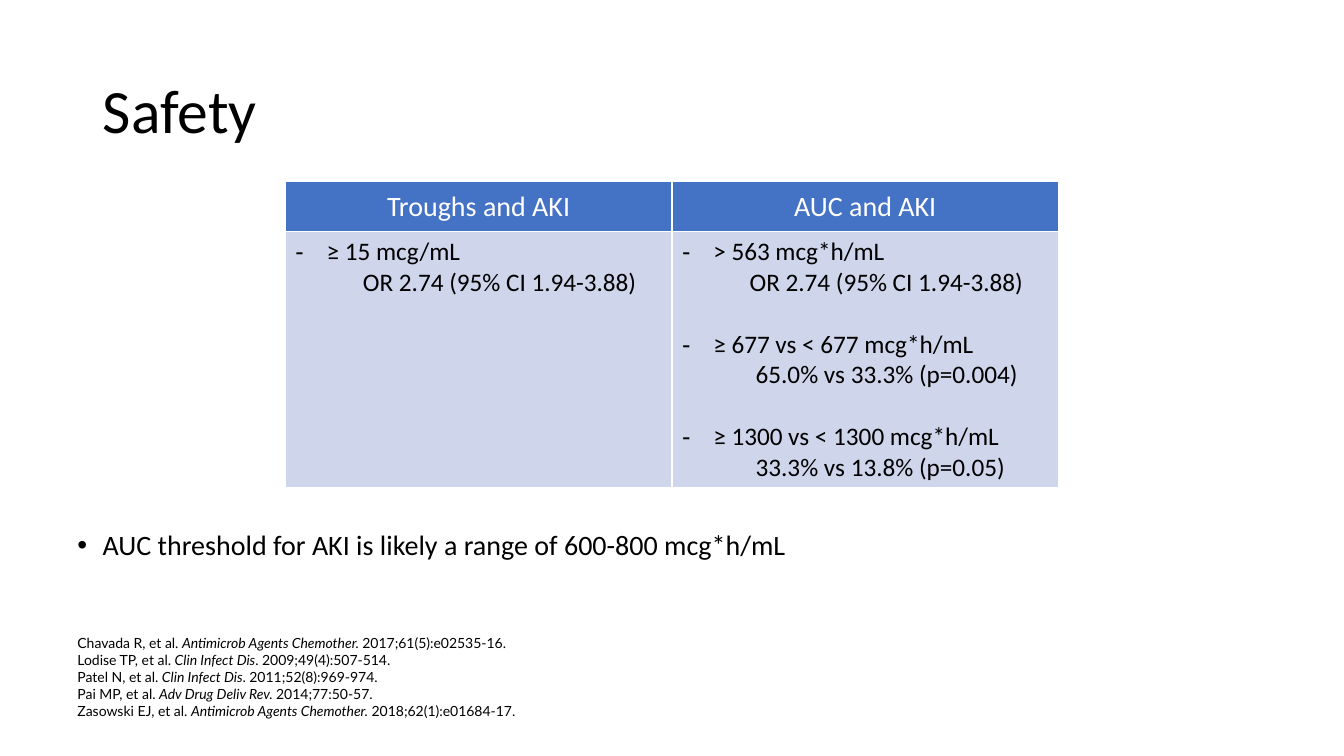
"""Build the slide on kidney safety of trough and AUC targets."""
from lxml import etree
from pptx import Presentation
from pptx.dml.color import RGBColor as Rgb
from pptx.enum import text as t
from pptx.oxml import ns
from pptx.util import Inches, Pt

THEME = {
    "ink": Rgb(0, 0, 0), "white": Rgb(255, 255, 255),
    "head": Rgb(0x44, 0x72, 0xC4), "cell": Rgb(0xCF, 0xD5, 0xEA),
    "font": "Calibri", "cite": "Lato",
    "title": 44, "lead": 20, "body": 18, "small": 10,
}


def add(par, words, size, color="ink", font="font", slant=False):
    """Add one styled run to a paragraph."""
    run = par.add_run()
    run.text = words
    face = run.font
    face.name, face.size = THEME[font], Pt(THEME[size])
    face.color.rgb = THEME[color]
    face.bold, face.italic = False, slant


def indent(par, left, mark=None):
    """Indent a paragraph, hanging it from a bullet if a mark is given."""
    props = par._p.get_or_add_pPr()
    props.set("marL", str(Inches(left)))
    props.set("indent", str(-Inches(left) if mark else 0))
    if mark:
        etree.SubElement(props, ns.qn("a:buFont")).set("typeface", "Arial")
        etree.SubElement(props, ns.qn("a:buChar")).set("char", mark)


deck = Presentation()
deck.slide_width, deck.slide_height = Inches(13.33), Inches(7.5)
slide = deck.slides.add_slide(deck.slide_layouts[5])
edge = Inches(0.67)

title = slide.shapes.title
title.left, title.top = Inches(0.92), Inches(0.4)
title.width, title.height = Inches(11.5), Inches(1.45)
frame = title.text_frame
frame.auto_size = t.MSO_AUTO_SIZE.NONE
frame.vertical_anchor = t.MSO_ANCHOR.MIDDLE
par = frame.paragraphs[0]
par.alignment, par.line_spacing = t.PP_ALIGN.LEFT, 0.9
add(par, "Safety", "title")

box = slide.shapes.add_textbox(edge, Inches(5.22), Inches(12), Inches(0.62))
box.text_frame.word_wrap = True
par = box.text_frame.paragraphs[0]
par.line_spacing, par.space_before = 0.9, Pt(10)
indent(par, 0.25, "•")
add(par, "AUC threshold for AKI is likely a range of 600-800 mcg*h/mL", "lead")

groups = [
    ("Troughs and AKI", [("≥ 15 mcg/mL", "OR 2.74 (95% CI 1.94-3.88)", 0.67)]),
    ("AUC and AKI", [
        ("> 563 mcg*h/mL", "OR 2.74 (95% CI 1.94-3.88)", 0.67),
        ("≥ 677 vs < 677 mcg*h/mL", "65.0% vs 33.3% (p=0.004)", 0.73),
        ("≥ 1300 vs < 1300 mcg*h/mL", "33.3% vs 13.8% (p=0.05)", 0.73),
    ]),
]
grid = slide.shapes.add_table(
    2, 2, Inches(2.83), Inches(1.8), Inches(7.67), Inches(3.04)).table
grid.rows[0].height, grid.rows[1].height = Inches(0.5), Inches(2.54)
for col, (name, facts) in enumerate(groups):
    head, cell = grid.cell(0, col), grid.cell(1, col)
    for part, fill in ((head, "head"), (cell, "cell")):
        part.fill.solid()
        part.fill.fore_color.rgb = THEME[fill]
    head.vertical_anchor = t.MSO_ANCHOR.MIDDLE
    par = head.text_frame.paragraphs[0]
    par.alignment = t.PP_ALIGN.CENTER
    add(par, name, "lead", "white")
    frame = cell.text_frame
    for row, (dose, risk, left) in enumerate(facts):
        par = frame.add_paragraph() if row else frame.paragraphs[0]
        par.space_before = Pt(22 if row else 0)
        indent(par, 0.31, "-")
        add(par, dose, "body")
        par = frame.add_paragraph()
        indent(par, left)
        add(par, risk, "body")

cites = [
    ("Chavada R, et al. ", "Antimicrob Agents Chemother. ", "2017;61(5):e02535-16."),
    ("Lodise TP, et al. ", "Clin Infect Dis", ". 2009;49(4):507-514."),
    ("Patel N, et al. ", "Clin Infect Dis", ". 2011;52(8):969-974."),
    ("Pai MP, et al. ", "Adv Drug Deliv Rev. ", "2014;77:50-57."),
    ("Zasowski EJ, et al. ", "Antimicrob Agents Chemother.", " 2018;62(1):e01684-17."),
]
box = slide.shapes.add_textbox(edge, Inches(6.25), Inches(7.96), Inches(0.94))
frame = box.text_frame
frame.word_wrap = True
frame.auto_size = t.MSO_AUTO_SIZE.SHAPE_TO_FIT_TEXT
for row, cite in enumerate(cites):
    par = frame.add_paragraph() if row else frame.paragraphs[0]
    for spot, words in enumerate(cite):
        add(par, words, "small", font="cite", slant=spot == 1)

deck.save("out.pptx")
